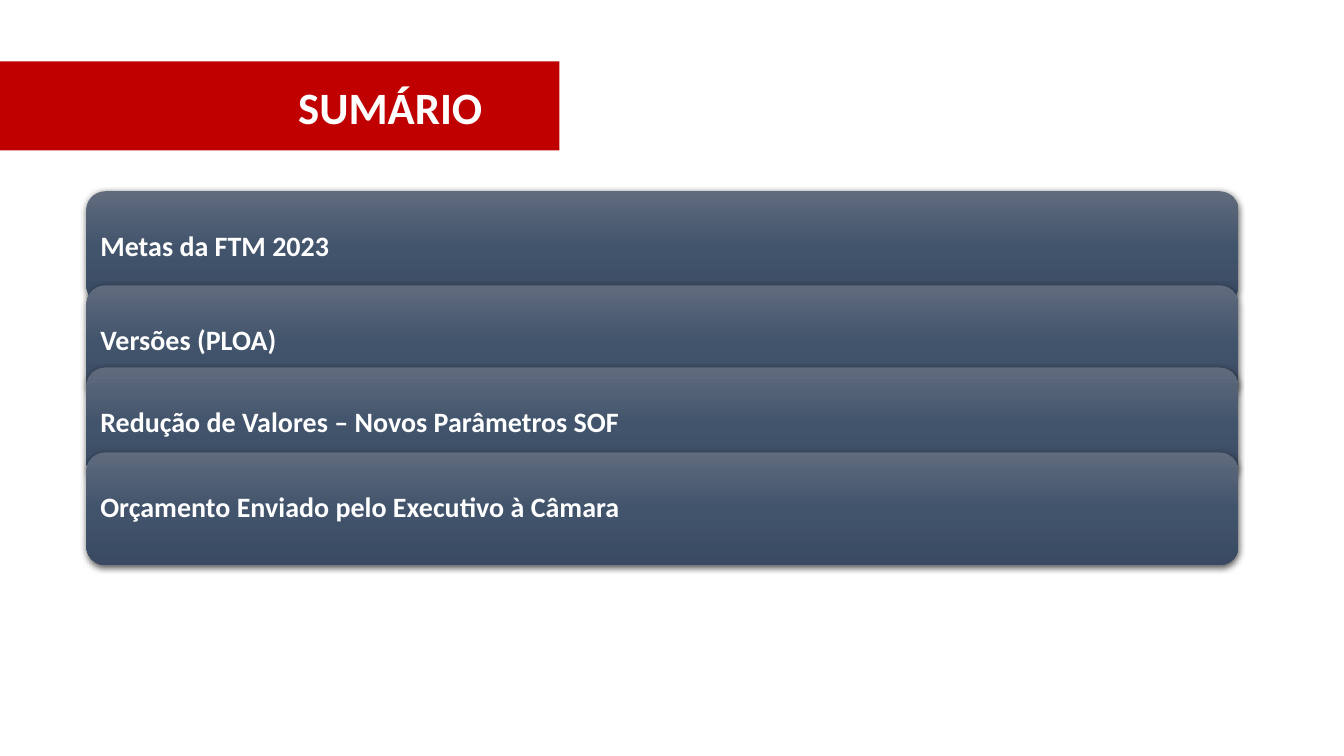
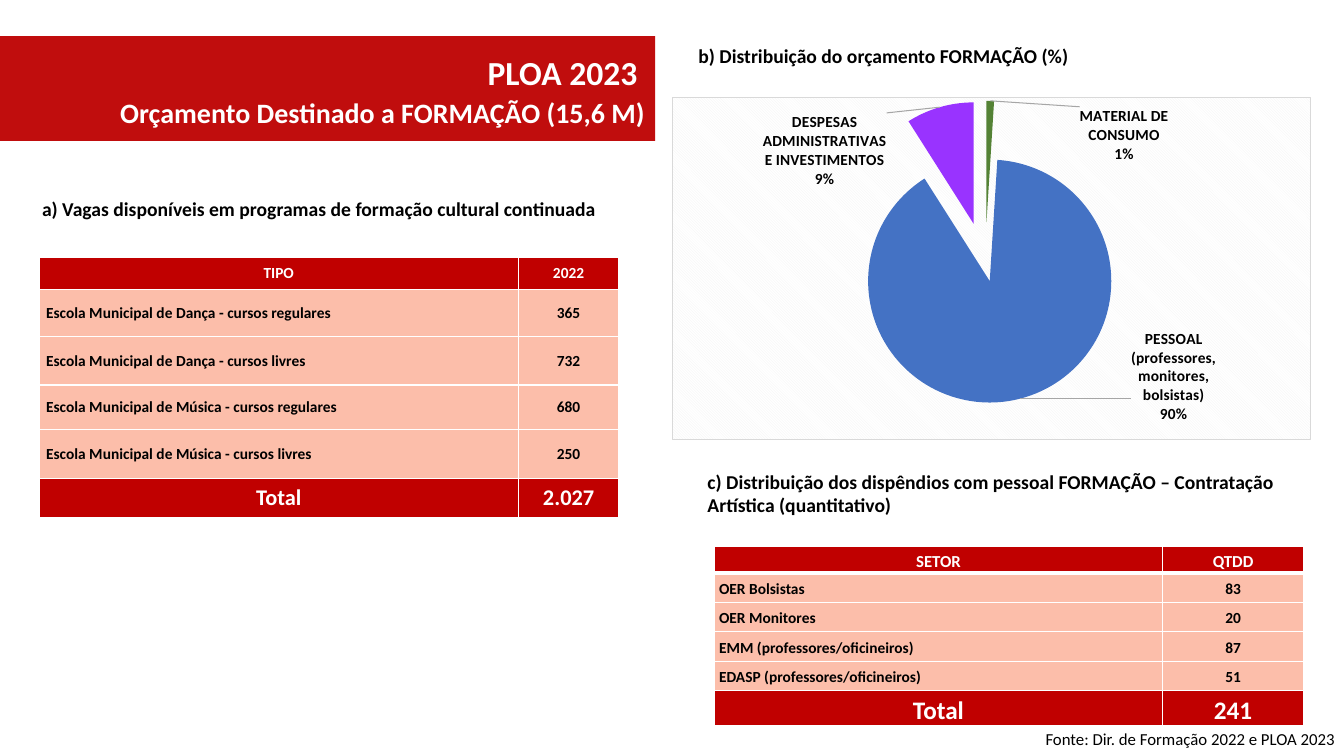
from dataclasses import dataclass

from lxml import etree
from pptx import Presentation
from pptx.chart.data import CategoryChartData
from pptx.dml.color import RGBColor
from pptx.enum.chart import XL_CHART_TYPE
from pptx.enum.shapes import MSO_SHAPE
from pptx.enum.text import MSO_ANCHOR, MSO_AUTO_SIZE, PP_ALIGN
from pptx.oxml import parse_xml
from pptx.oxml.ns import nsdecls, qn
from pptx.util import Cm, Pt


@dataclass(frozen=True)
class Theme:
    font: str = "Calibri"
    red: str = "C00000"
    band_red: str = "C00D0D"
    pink: str = "FCBEAA"
    white: str = "FFFFFF"
    black: str = "000000"
    bar_stops: tuple = ((0, "606B7D"), (50, "42546C"), (100, "394A62"))
    slices: tuple = ("548235", "4472C4", "9933FF")
    hatch: str = "F2F2F2"
    frame: str = "D9D9D9"
    leader: str = "A6A6A6"
    title: int = 32
    band_title: int = 24
    band_subtitle: int = 20
    bar: int = 20
    caption: int = 14
    source: int = 12
    chart_label: int = 11


T = Theme()


# Shared helpers
def rgb(color):
    return RGBColor.from_string(color)


def add_run(p, text, size, color, bold=True):
    r = p.add_run()
    r.text = text
    r.font.name, r.font.size, r.font.bold = T.font, Pt(size), bold
    r.font.color.rgb = rgb(color)


def add_box(s, shape, box, color):
    sp = s.shapes.add_shape(shape, *map(Cm, box))
    sp.shadow.inherit = False
    sp.fill.solid()
    sp.fill.fore_color.rgb = rgb(color)
    sp.line.fill.background()
    return sp


def add_text(s, box, text, size, bold=True, align=PP_ALIGN.LEFT, wrap=True):
    tf = s.shapes.add_textbox(*map(Cm, box)).text_frame
    tf.word_wrap = wrap
    p = tf.paragraphs[0]
    p.alignment = align
    add_run(p, text, size, T.black, bold)


def set_title(s, box, lines, align, spacing=0.9, fill=None):
    """Lines are (text, size) pairs, set in one paragraph."""
    sp = s.shapes.title
    sp.left, sp.top, sp.width, sp.height = map(Cm, box)
    if fill:
        sp.fill.solid()
        sp.fill.fore_color.rgb = rgb(fill)
    tf = sp.text_frame
    tf.auto_size, tf.word_wrap = MSO_AUTO_SIZE.NONE, True
    tf.vertical_anchor = MSO_ANCHOR.MIDDLE
    p = tf.paragraphs[0]
    p.alignment, p.line_spacing = align, spacing
    for i, (text, size) in enumerate(lines):
        if i:
            p.add_line_break()
        add_run(p, text, size, T.white)


# Summary bars
def style_bar(sp):
    sp.fill.gradient()
    sp.fill.gradient_angle = 270
    stops = sp._element.spPr.find(qn("a:gradFill")).find(qn("a:gsLst"))
    for stop in list(stops):
        stops.remove(stop)
    for pos, color in T.bar_stops:
        gs = etree.SubElement(stops, qn("a:gs"), pos=str(pos * 1000))
        etree.SubElement(gs, qn("a:srgbClr"), val=color)
    effects = sp._element.spPr.find(qn("a:effectLst"))
    effects.append(parse_xml(
        f'<a:outerShdw {nsdecls("a")} blurRad="57150" dist="19050" dir="5400000" '
        f'algn="ctr" rotWithShape="0"><a:srgbClr val="{T.black}">'
        '<a:alpha val="63000"/></a:srgbClr></a:outerShdw>'))


def add_bars(s, box, items):
    """Items are (text, offset from the top of the box); bars overlap."""
    left, top, width, height = box
    for text, offset in items:
        sp = add_box(s, MSO_SHAPE.ROUNDED_RECTANGLE,
                     (left, top + offset, width, height), T.bar_stops[0][1])
        style_bar(sp)
        tf = sp.text_frame
        tf.word_wrap, tf.vertical_anchor = True, MSO_ANCHOR.MIDDLE
        tf.margin_left = tf.margin_right = Cm(0.21)
        p = tf.paragraphs[0]
        p.alignment, p.line_spacing = PP_ALIGN.LEFT, 0.9
        add_run(p, text, T.bar, T.white)


# Tables with a header row and a total row
def set_borders(cell, bottom):
    tc_pr = cell._tc.get_or_add_tcPr()
    for side, points in (("L", 1), ("R", 1), ("T", 1), ("B", bottom)):
        ln = etree.SubElement(tc_pr, qn(f"a:ln{side}"), w=str(Pt(points)))
        fill = etree.SubElement(ln, qn("a:solidFill"))
        etree.SubElement(fill, qn("a:srgbClr"), val=T.white)


def add_totals_table(s, origin, widths, heights, rows, sizes, indent,
                     margin=0, spacing=1.0, header_rule=1):
    """Sizes are those of the header, body and total rows."""
    size_of = [sizes[0]] + [sizes[1]] * (len(rows) - 2) + [sizes[2]]
    box = (*origin, sum(widths), sum(heights))
    table = s.shapes.add_table(len(rows), len(widths), *map(Cm, box)).table
    for col, width in zip(table.columns, widths):
        col.width = Cm(width)
    for i, values in enumerate(rows):
        table.rows[i].height = Cm(heights[i])
        strong = i in (0, len(rows) - 1)
        for j, text in enumerate(values):
            label = j == 0 and not strong
            cell = table.cell(i, j)
            set_borders(cell, 1 if i else header_rule)
            cell.fill.solid()
            cell.fill.fore_color.rgb = rgb(T.red if strong else T.pink)
            cell.vertical_anchor = MSO_ANCHOR.MIDDLE
            cell.margin_top = cell.margin_bottom = 0
            cell.margin_left = Cm(indent if label else margin)
            cell.margin_right = Cm(margin)
            p = cell.text_frame.paragraphs[0]
            p.alignment = PP_ALIGN.LEFT if label else PP_ALIGN.CENTER
            p.line_spacing = spacing
            add_run(p, text, size_of[i], T.white if strong else T.black)


# Exploded pie
def manual_layout(x, y, size=None):
    edges = '<c:xMode val="edge"/><c:yMode val="edge"/>' if size else ""
    target = '<c:layoutTarget val="inner"/>' if size else ""
    extent = f'<c:w val="{size[0]}"/><c:h val="{size[1]}"/>' if size else ""
    return parse_xml(
        f'<c:layout {nsdecls("c")}><c:manualLayout>{target}{edges}'
        f'<c:x val="{x}"/><c:y val="{y}"/>{extent}</c:manualLayout></c:layout>')


def label_pie(ser, offsets):
    """Offsets are label shifts as fractions of the chart box."""
    shows = "".join(f'<c:show{name} val="{int(name in ("CatName", "Percent"))}"/>'
                    for name in ("LegendKey", "Val", "CatName", "SerName",
                                 "Percent", "BubbleSize"))
    body = ('<c:numFmt formatCode="0%" sourceLinked="0"/>'
            '<c:spPr><a:noFill/><a:ln><a:noFill/></a:ln></c:spPr>'
            f'<c:txPr><a:bodyPr/><a:p><a:pPr><a:defRPr sz="{T.chart_label * 100}" b="1">'
            f'<a:solidFill><a:srgbClr val="{T.black}"/></a:solidFill>'
            f'<a:latin typeface="{T.font}"/></a:defRPr></a:pPr>'
            '<a:endParaRPr/></a:p></c:txPr>'
            f'<c:dLblPos val="inEnd"/>{shows}<c:separator>\n</c:separator>')
    labels = parse_xml(
        f'<c:dLbls {nsdecls("c", "a")}>'
        + "".join(f'<c:dLbl><c:idx val="{i}"/>{body}</c:dLbl>'
                  for i in range(len(offsets)))
        + f'{body}<c:showLeaderLines val="1"/><c:leaderLines><c:spPr><a:ln w="9525">'
        f'<a:solidFill><a:srgbClr val="{T.leader}"/></a:solidFill></a:ln></c:spPr>'
        '</c:leaderLines></c:dLbls>')
    for label, (x, y) in zip(labels, offsets):
        label.insert(1, manual_layout(x, y))
    ser._element.find(qn("c:cat")).addprevious(labels)


def add_pie(s, box, slices):
    """Slices are (category, value, explosion, label offset)."""
    data = CategoryChartData()
    data.categories = [row[0] for row in slices]
    data.add_series("Series 1", [row[1] for row in slices])
    chart = s.shapes.add_chart(XL_CHART_TYPE.PIE, *map(Cm, box), data).chart
    chart.has_title = chart.has_legend = False
    chart.font.name, chart.font.size = T.font, Pt(T.chart_label)
    plot = chart.plots[0]
    plot.vary_by_categories = True
    ser = plot.series[0]
    for i, (color, row) in enumerate(zip(T.slices, slices)):
        fmt = ser.points[i].format
        fmt.fill.solid()
        fmt.fill.fore_color.rgb = rgb(color)
        fmt.line.fill.background()
        point = ser._element.findall(qn("c:dPt"))[i]
        explosion = etree.Element(qn("c:explosion"), val=str(row[2]))
        point.find(qn("c:spPr")).addprevious(explosion)
    # The series value makes the pie shrink, so exploded slices stay in the frame
    widest = max(row[2] for row in slices)
    ser._element.find(qn("c:dPt")).addprevious(
        etree.Element(qn("c:explosion"), val=str(widest)))
    label_pie(ser, [row[3] for row in slices])
    area = chart._chartSpace.chart.plotArea
    for layout in area.findall(qn("c:layout")):
        area.remove(layout)
    area.insert(0, manual_layout(0, 0.01, (0.98, 0.95)))
    # Hatched chart background with a thin frame
    chart._chartSpace.chart.addnext(parse_xml(
        f'<c:spPr {nsdecls("c", "a")}><a:pattFill prst="dkDnDiag">'
        f'<a:fgClr><a:srgbClr val="{T.hatch}"/></a:fgClr>'
        f'<a:bgClr><a:srgbClr val="{T.white}"/></a:bgClr></a:pattFill>'
        f'<a:ln w="9525"><a:solidFill><a:srgbClr val="{T.frame}"/></a:solidFill>'
        '</a:ln></c:spPr>'))


# Slides
def summary_slide(s):
    band = add_box(s, MSO_SHAPE.RECTANGLE, (0, 1.55, 14.1, 2.24), T.red)
    s.shapes._spTree.insert(2, band._element)
    set_title(s, (7.26, 1.93, 6.65, 1.68), [("SUMÁRIO", T.title)], PP_ALIGN.LEFT)
    add_bars(s, (2.18, 4.82, 29.03, 2.84), [
        ("Metas da FTM 2023", 0),
        ("Versões (PLOA)", 2.37),
        ("Redução de Valores – Novos Parâmetros SOF", 4.44),
        ("Orçamento Enviado pelo Executivo à Câmara", 6.58),
    ])


def training_slide(s):
    set_title(s, (0, 0.91, 16.51, 2.64),
              [("PLOA 2023 ", T.band_title),
               ("Orçamento Destinado a FORMAÇÃO (15,6 M)", T.band_subtitle)],
              PP_ALIGN.RIGHT, spacing=1.1, fill=T.band_red)

    # a) Places
    add_text(s, (0.81, 4.85, 14.78, 0.86),
             "a) Vagas disponíveis em programas de formação cultural continuada",
             T.caption)
    add_totals_table(s, (0.99, 6.48), (12.07, 2.54),
                     (0.81, 1.19, 1.22, 1.12, 1.24, 0.97), [
        ("TIPO", "2022"),
        ("Escola Municipal de Dança - cursos regulares", "365"),
        ("Escola Municipal de Dança - cursos livres", "732"),
        ("Escola Municipal de Música - cursos regulares", "680"),
        ("Escola Municipal de Música - cursos livres", "250"),
        ("Total", "2.027"),
    ], (11, 11, 16), indent=0.17)

    # b) Budget
    add_text(s, (17.35, 0.99, 14.78, 0.86),
             "b) Distribuição do orçamento FORMAÇÃO (%)", T.caption)
    add_pie(s, (16.94, 2.44, 16.1, 8.66), [
        ("MATERIAL DE CONSUMO", 1, 34, (0.21, 0)),
        ("PESSOAL (professores, monitores, bolsistas)", 90, 15, (0.31, 0.09)),
        ("DESPESAS ADMINISTRATIVAS E INVESTIMENTOS", 9, 34, (-0.28, 0)),
    ])

    # c) Staff
    add_text(s, (17.58, 11.71, 15.7, 1.45),
             "c) Distribuição dos dispêndios com pessoal FORMAÇÃO – "
             "Contratação Artística (quantitativo)", T.caption)
    add_totals_table(s, (18, 13.78), (11.3, 3.55),
                     (0.66, 0.74, 0.74, 0.74, 0.74, 0.86), [
        ("SETOR", "QTDD"),
        ("OER Bolsistas", "83"),
        ("OER Monitores", "20"),
        ("EMM (professores/oficineiros)", "87"),
        ("EDASP (professores/oficineiros)", "51"),
        ("Total", "241"),
    ], (12, 11, 18), indent=0.12, margin=0.12, spacing=1.15, header_rule=3)
    add_text(s, (25.98, 18.24, 7.92, 0.76),
             "Fonte: Dir. de Formação 2022 e PLOA 2023", T.source,
             bold=False, align=PP_ALIGN.RIGHT, wrap=False)


def main():
    prs = Presentation()
    prs.slide_width, prs.slide_height = Cm(33.87), Cm(19.05)
    for build in (summary_slide, training_slide):
        build(prs.slides.add_slide(prs.slide_layouts[5]))
    prs.save("out.pptx")


if __name__ == "__main__":
    main()
